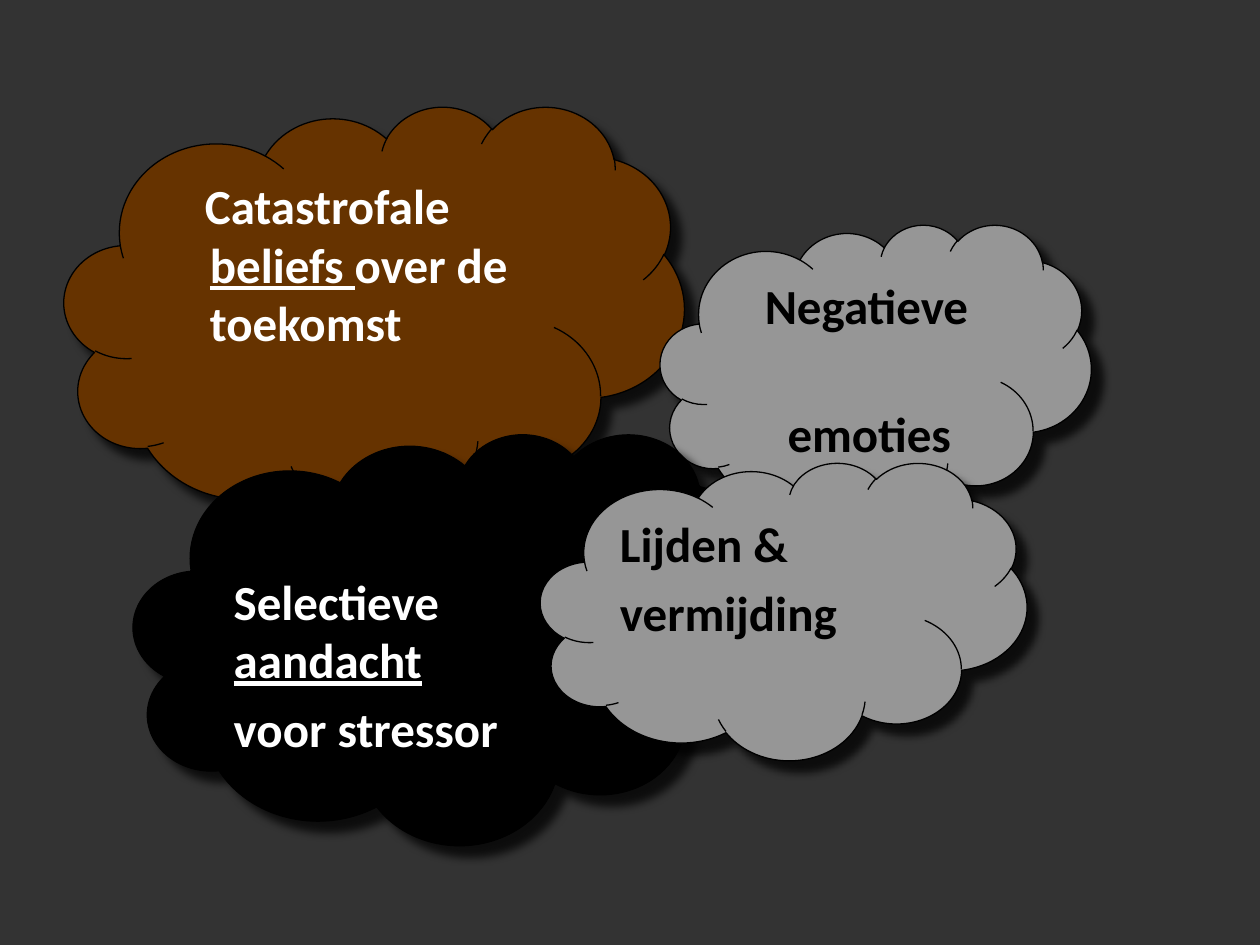
from lxml.etree import SubElement
from pptx import Presentation
from pptx.dml.color import RGBColor
from pptx.enum.shapes import MSO_SHAPE
from pptx.enum.text import MSO_ANCHOR, PP_ALIGN
from pptx.oxml.ns import qn
from pptx.util import Inches, Pt

COLORS = {
    "background": "333333",
    "brown": "663300",
    "gray": "969696",
    "black": "000000",
    "white": "FFFFFF",
}
WIDTH, HEIGHT = Inches(10), Inches(7.5)
FONT, SIZE = "Calibri", 28


def rgb(name):
    return RGBColor.from_string(COLORS[name])


def across(percent):
    return round(WIDTH * percent / 100)


def down(percent):
    return round(HEIGHT * percent / 100)


def add_shadow(sp):
    sp.shadow.inherit = False
    effects = sp._element.spPr.find(qn("a:effectLst"))
    shadow = SubElement(effects, qn("a:outerShdw"), blurRad=str(Pt(5)),
                        dist=str(Pt(8.5)), dir=str(45 * 60000),
                        algn="ctr", rotWithShape="0")
    color = SubElement(shadow, qn("a:srgbClr"), val=COLORS["black"])
    SubElement(color, qn("a:alpha"), val="75000")


def add_cloud(s, left, top, width, height, fill, inset=0.67):
    sp = s.shapes.add_shape(MSO_SHAPE.CLOUD, across(left), down(top),
                            across(width), down(height))
    sp.fill.solid()
    sp.fill.fore_color.rgb = rgb(fill)
    sp.line.color.rgb = rgb("black")
    sp.line.width = Pt(0.75)
    add_shadow(sp)
    tf = sp.text_frame
    tf.word_wrap = True
    tf.vertical_anchor = MSO_ANCHOR.TOP
    tf.margin_top = down(inset)
    return tf


def add_paragraph(tf, runs, color, margin=0, indent=0, before=0.2 * SIZE):
    p = tf.add_paragraph() if tf.text else tf.paragraphs[0]
    p.alignment = PP_ALIGN.LEFT
    p.space_before = Pt(before)
    p.font.name = FONT
    p.font.size = Pt(SIZE)
    p.font.bold = True
    p.font.color.rgb = rgb(color)
    pPr = p._p.get_or_add_pPr()
    pPr.set("marL", str(across(margin)))
    pPr.set("indent", str(across(indent)))
    for text, underline in runs:
        r = p.add_run()
        r.text = text
        if underline:
            r.font.underline = True


def main():
    prs = Presentation()
    prs.slide_width, prs.slide_height = WIDTH, HEIGHT
    s = prs.slides.add_slide(prs.slide_layouts[6])
    s.background.fill.solid()
    s.background.fill.fore_color.rgb = rgb("background")

    beliefs = add_cloud(s, 5.1, 11.2, 49.2, 44.13, "brown")
    add_paragraph(beliefs, [("Catastrofale ", False), ("beliefs ", True),
                            ("over de toekomst", False)],
                  "white", margin=3.8, indent=-0.4)

    emotions = add_cloud(s, 52.4, 23.73, 34.2, 31.47, "gray")
    add_paragraph(emotions, [("Negatieve", False)], "black", margin=2.6)
    add_paragraph(emotions, [("emoties", False)], "black", margin=4.4, before=39.6)

    attention = add_cloud(s, 10.6, 45.87, 50.6, 43.47, "black", inset=8)
    add_paragraph(attention, [("Selectieve ", False), ("aandacht", True)], "white")
    add_paragraph(attention, [("voor stressor", False)], "white")

    avoidance = add_cloud(s, 42.9, 48.93, 38.6, 31.47, "gray")
    for text in ("Lijden &", "vermijding"):
        add_paragraph(avoidance, [(text, False)], "black")

    prs.save("out.pptx")


if __name__ == "__main__":
    main()
